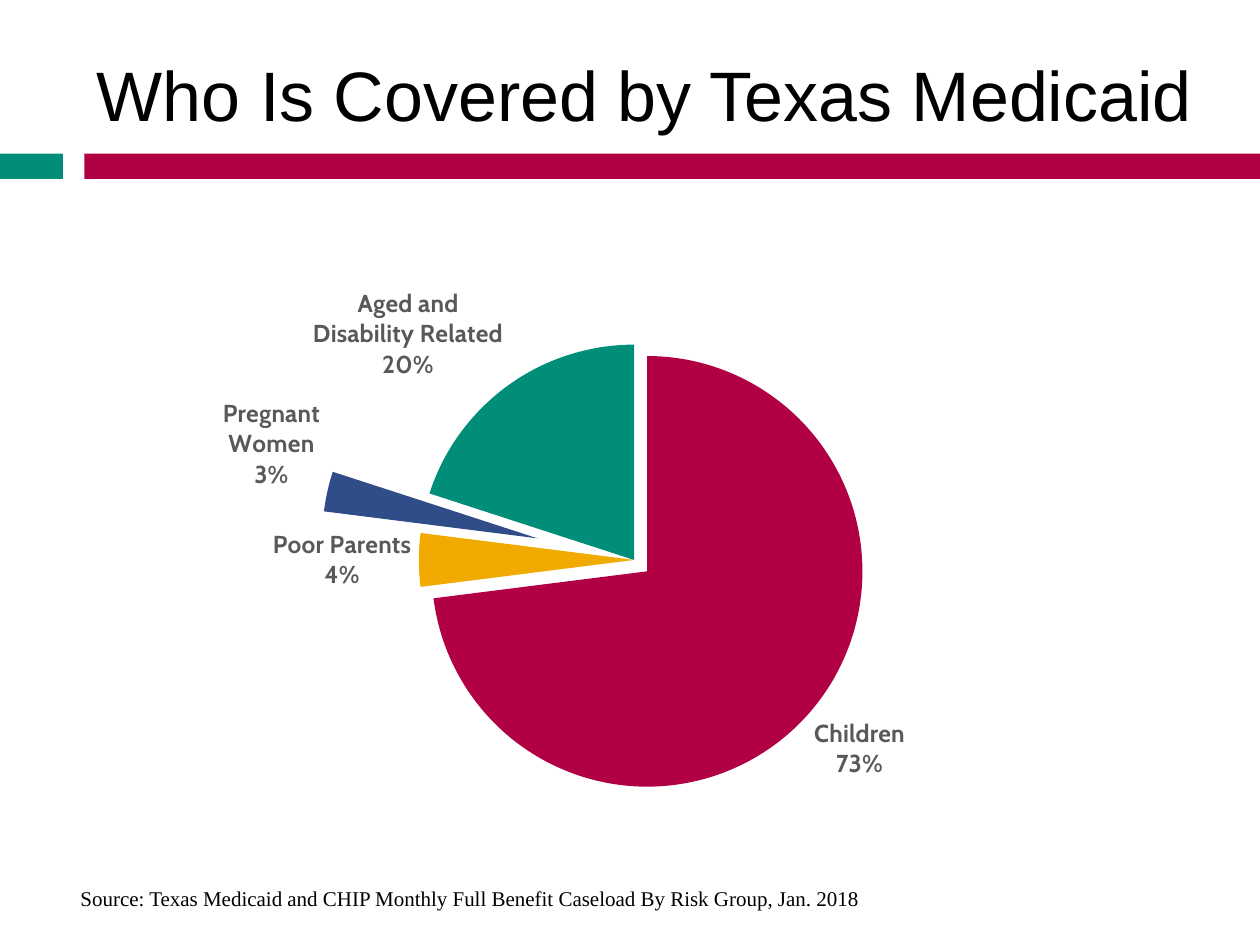
import pptx
import pptx.chart.data
import pptx.dml.color
import pptx.enum.chart
import pptx.enum.shapes
import pptx.enum.text
import pptx.oxml.ns
import pptx.oxml.xmlchemy
import pptx.util

Inches = pptx.util.Inches
RGBColor = pptx.dml.color.RGBColor
TEAL = RGBColor(0x00, 0x8E, 0x79)
CRIMSON = RGBColor(0xB1, 0x00, 0x43)
AMBER = RGBColor(0xF1, 0xAB, 0x00)
NAVY = RGBColor(0x31, 0x4D, 0x89)
GRAY = RGBColor(0x59, 0x59, 0x59)
BLACK = RGBColor(0x00, 0x00, 0x00)

GROUPS = [
    ("Children", 73, CRIMSON, 8),
    ("Poor Parents", 4, AMBER, 0),
    ("Pregnant Women", 3, NAVY, 46),
    ("Aged and Disability Related", 20, TEAL, 0),
]
PLOT_LAYOUT = {"layoutTarget": "inner", "xMode": "edge", "yMode": "edge",
               "x": 0.23, "y": 0.1, "w": 0.55, "h": 0.8}


def make_element(tag, value=None):
    element = pptx.oxml.xmlchemy.OxmlElement(tag)
    if value is not None:
        element.set("val", str(value))
    return element


def add_bar(slide, left, width, color):
    bar = slide.shapes.add_shape(
        pptx.enum.shapes.MSO_SHAPE.RECTANGLE,
        Inches(left), Inches(1.22), Inches(width), Inches(0.2))
    bar.shadow.inherit = False
    bar.fill.solid()
    bar.fill.fore_color.rgb = color
    bar.line.fill.background()


def add_text(slide, box, text, font_name, size, anchor):
    frame = slide.shapes.add_textbox(*map(Inches, box)).text_frame
    frame.word_wrap = True
    frame.vertical_anchor = anchor
    run = frame.paragraphs[0].add_run()
    run.text = text
    run.font.name = font_name
    run.font.size = pptx.util.Pt(size)
    run.font.color.rgb = BLACK


def place_plot(chart):
    plot_area = chart.plots[0]._element.getparent()
    for default_layout in plot_area.findall(pptx.oxml.ns.qn("c:layout")):
        plot_area.remove(default_layout)
    layout = make_element("c:layout")
    manual = make_element("c:manualLayout")
    for name, value in PLOT_LAYOUT.items():
        manual.append(make_element(f"c:{name}", value))
    layout.append(manual)
    plot_area.insert(0, layout)


def style_labels(labels):
    labels.show_category_name = True
    labels.show_percentage = True
    labels.show_value = False
    labels.number_format = "0%"
    labels.number_format_is_linked = False
    labels.position = pptx.enum.chart.XL_LABEL_POSITION.OUTSIDE_END
    labels.font.name = "Cabin"
    labels.font.size = pptx.util.Pt(14)
    labels.font.bold = True
    labels.font.color.rgb = GRAY
    separator = make_element("c:separator")
    separator.text = "\n"
    flags = labels._element
    last_flag = flags.find(pptx.oxml.ns.qn("c:showBubbleSize"))
    if last_flag is None:
        last_flag = flags.find(pptx.oxml.ns.qn("c:showPercent"))
    last_flag.addnext(separator)


def style_slice(point, color, explosion):
    point.format.fill.solid()
    point.format.fill.fore_color.rgb = color
    point.format.fill._xPr.addprevious(make_element("c:explosion", explosion))


def add_coverage_pie(slide):
    coverage = pptx.chart.data.CategoryChartData()
    coverage.categories = [name for name, *_ in GROUPS]
    coverage.add_series("Series 1", [share for _, share, *_ in GROUPS])
    chart = slide.shapes.add_chart(
        pptx.enum.chart.XL_CHART_TYPE.PIE,
        Inches(1.08), Inches(1.86), Inches(7.83), Inches(5.17), coverage).chart
    chart.has_legend = False
    chart.has_title = False
    chart.font.name = "Cabin"
    chart.font.size = pptx.util.Pt(10)
    chart.font.color.rgb = BLACK
    chart.plots[0].vary_by_categories = True
    place_plot(chart)
    shares = chart.plots[0].series[0]
    for index, (_, _, color, explosion) in enumerate(GROUPS):
        style_slice(shares.points[index], color, explosion)
    style_labels(shares.data_labels)
    first_slice = shares._element.find(pptx.oxml.ns.qn("c:dPt"))
    first_slice.addprevious(make_element("c:explosion", 21))


def main():
    deck = pptx.Presentation()
    deck.slide_width, deck.slide_height = Inches(10), Inches(7.5)
    slide = deck.slides.add_slide(deck.slide_layouts[6])
    anchors = pptx.enum.text.MSO_ANCHOR
    add_bar(slide, 0, 0.5, TEAL)
    add_bar(slide, 0.67, 9.33, CRIMSON)
    add_text(slide, (0.67, 0.33, 9.25, 0.83),
             "Who Is Covered by Texas Medicaid", "Arial", 40, anchors.MIDDLE)
    add_coverage_pie(slide)
    add_text(slide, (0.54, 6.98, 9.08, 0.3),
             "Source: Texas Medicaid and CHIP Monthly Full Benefit Caseload "
             "By Risk Group, Jan. 2018", "Times New Roman", 12, anchors.TOP)
    deck.save("out.pptx")


if __name__ == "__main__":
    main()
